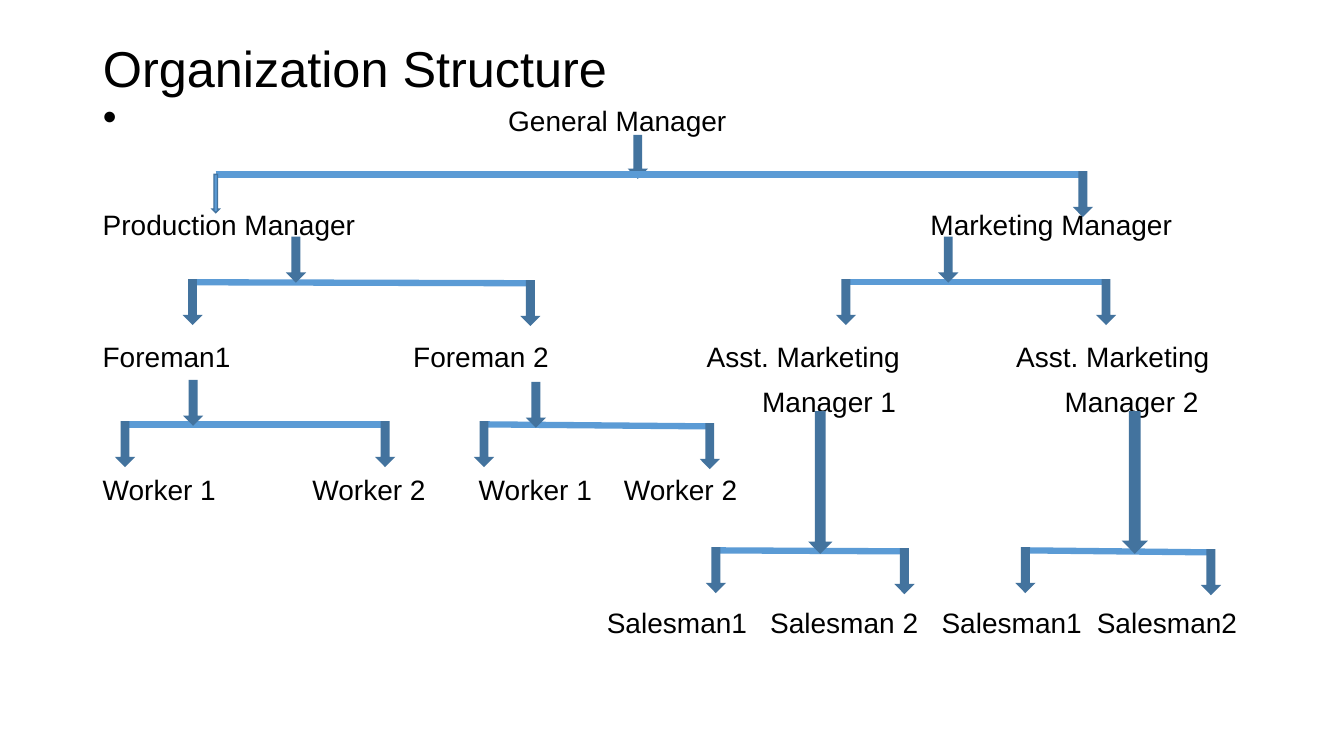
from dataclasses import dataclass
from pptx import Presentation, util as u
from pptx.dml.color import RGBColor
from pptx.enum import shapes, text
from pptx.oxml.xmlchemy import OxmlElement

COLORS = {"ink": "000000", "bar": "5B9BD5", "edge": "43739E"}
CELL = u.Inches(0.1)
DROP = 3.8
LEG = 0.5
THICK = 4.5


@dataclass
class Branch:
    left: float
    top: float
    width: float
    stem: float
    stem_top: float
    stem_height: float = DROP
    stem_width: float = LEG
    tilt: float = 0
    stem_behind: bool = False
    left_leg: tuple = (LEG, THICK)


BRANCHES = [
    Branch(21.4, 17.3, 86, 63.25, 13.7, 3.6, stem_behind=True, left_leg=(0.7, 1)),
    Branch(19.1, 28, 33.5, 29.35, 23.8, tilt=0.1),
    Branch(83.9, 28, 25.8, 94.05, 23.8),
    Branch(12.4, 42.1, 25.8, 19.15, 38),
    Branch(48, 42.1, 22.4, 53.15, 38.2, tilt=0.2),
    Branch(71, 54.6, 18.7, 81.35, 41.1, 13.4, 0.9, tilt=0.1),
    Branch(101.7, 54.6, 18.4, 112.55, 41.1, 13.4, 1.1, tilt=0.2),
]

ROWS = [
    (0, [(0, "Production Manager"), (82.1, "Marketing Manager")]),
    (72.8, [(0, "Foreman1"), (30.8, "Foreman 2"),
            (59.9, "Asst. Marketing"), (90.6, "Asst. Marketing")]),
    (10, [(65.4, "Manager 1"), (95.4, "Manager 2")]),
    (41.7, [(0, "Worker 1"), (20.8, "Worker 2"),
            (37.3, "Worker 1"), (51.7, "Worker 2")]),
    (73.3, [(50, "Salesman1"), (66.2, "Salesman 2"),
            (83.2, "Salesman1"), (98.6, "Salesman2")]),
]


def cells(*counts):
    return [round(count * CELL) for count in counts]


def color(name):
    return RGBColor.from_string(COLORS[name])


def place(shape, box):
    shape.left, shape.top, shape.width, shape.height = cells(*box)


def write(para, words, size=20, font="Arial"):
    span = para.add_run()
    span.text = words
    span.font.size = u.Pt(size)
    span.font.name = font
    span.font.color.rgb = color("ink")


def format_para(para, before, stops, bullet=False):
    para.alignment = text.PP_ALIGN.LEFT
    para.line_spacing = 0.9
    para.space_before = u.Pt(before)
    props = para._p.get_or_add_pPr()
    if bullet:
        hang = cells(2.5)[0]
        props.set("marL", str(hang))
        props.set("indent", str(-hang))
        mark = OxmlElement("a:buChar")
        mark.set("char", "•")
        props.append(mark)
    tabs = OxmlElement("a:tabLst")
    for stop in stops:
        tab = OxmlElement("a:tab")
        tab.set("pos", str(cells(stop)[0]))
        tab.set("algn", "l")
        tabs.append(tab)
    props.append(tabs)


def add_title(page, box):
    title = page.shapes.title
    place(title, box)
    frame = title.text_frame
    frame.auto_size = text.MSO_AUTO_SIZE.NONE
    frame.vertical_anchor = text.MSO_ANCHOR.MIDDLE
    para = frame.paragraphs[0]
    para.alignment = text.PP_ALIGN.LEFT
    para.line_spacing = 0.9
    write(para, "Organization Structure", 36)


def add_head(page, box):
    body = page.placeholders[1]
    place(body, box)
    frame = body.text_frame
    frame.auto_size = text.MSO_AUTO_SIZE.NONE
    head = frame.paragraphs[0]
    format_para(head, 0, [40.2], bullet=True)
    write(head, "\t", 28, "Calibri")
    write(head, "General Manager")


def add_roles(page, box):
    frame = page.shapes.add_textbox(*cells(*box)).text_frame
    frame.word_wrap = True
    for index, (before, roles) in enumerate(ROWS):
        para = frame.add_paragraph() if index else frame.paragraphs[0]
        format_para(para, before, [stop for stop, _ in roles if stop])
        write(para, "".join("\t" * (stop > 0) + role for stop, role in roles))


def add_arrow(page, center, top, height=DROP, width=LEG, weight=THICK):
    box = cells(center - width / 2, top, width, height)
    arrow = page.shapes.add_shape(shapes.MSO_SHAPE.DOWN_ARROW, *box)
    arrow.shadow.inherit = False
    arrow.fill.solid()
    arrow.fill.fore_color.rgb = color("bar")
    arrow.line.color.rgb = color("edge")
    arrow.line.width = u.Pt(weight)
    corner = OxmlElement("a:miter")
    corner.set("lim", "800000")
    arrow.line._get_or_add_ln().append(corner)


def add_bar(page, left, top, right, bottom):
    bar = page.shapes.add_connector(
        shapes.MSO_CONNECTOR.STRAIGHT, *cells(left, top, right, bottom))
    bar.line.color.rgb = color("bar")
    bar.line.width = u.Pt(THICK)
    bar._element.spPr.append(OxmlElement("a:effectLst"))


def add_branch(page, branch):
    right = branch.left + branch.width
    bottom = branch.top + branch.tilt
    stem = (branch.stem, branch.stem_top, branch.stem_height, branch.stem_width)
    if branch.stem_behind:
        add_arrow(page, *stem)
    add_bar(page, branch.left, branch.top, right, bottom)
    width, weight = branch.left_leg
    add_arrow(page, branch.left, branch.top, width=width, weight=weight)
    add_arrow(page, right, bottom)
    if not branch.stem_behind:
        add_arrow(page, *stem)


def main():
    deck = Presentation()
    deck.slide_width, deck.slide_height = u.Inches(13.33), u.Inches(7.5)
    page = deck.slides.add_slide(deck.slide_layouts[1])
    add_title(page, (9.2, 4, 115, 6.1))
    add_head(page, (9.2, 9.2, 115, 6))
    add_roles(page, (9.2, 20.5, 115, 47.1))
    for branch in BRANCHES:
        add_branch(page, branch)
    deck.save("out.pptx")


if __name__ == "__main__":
    main()
